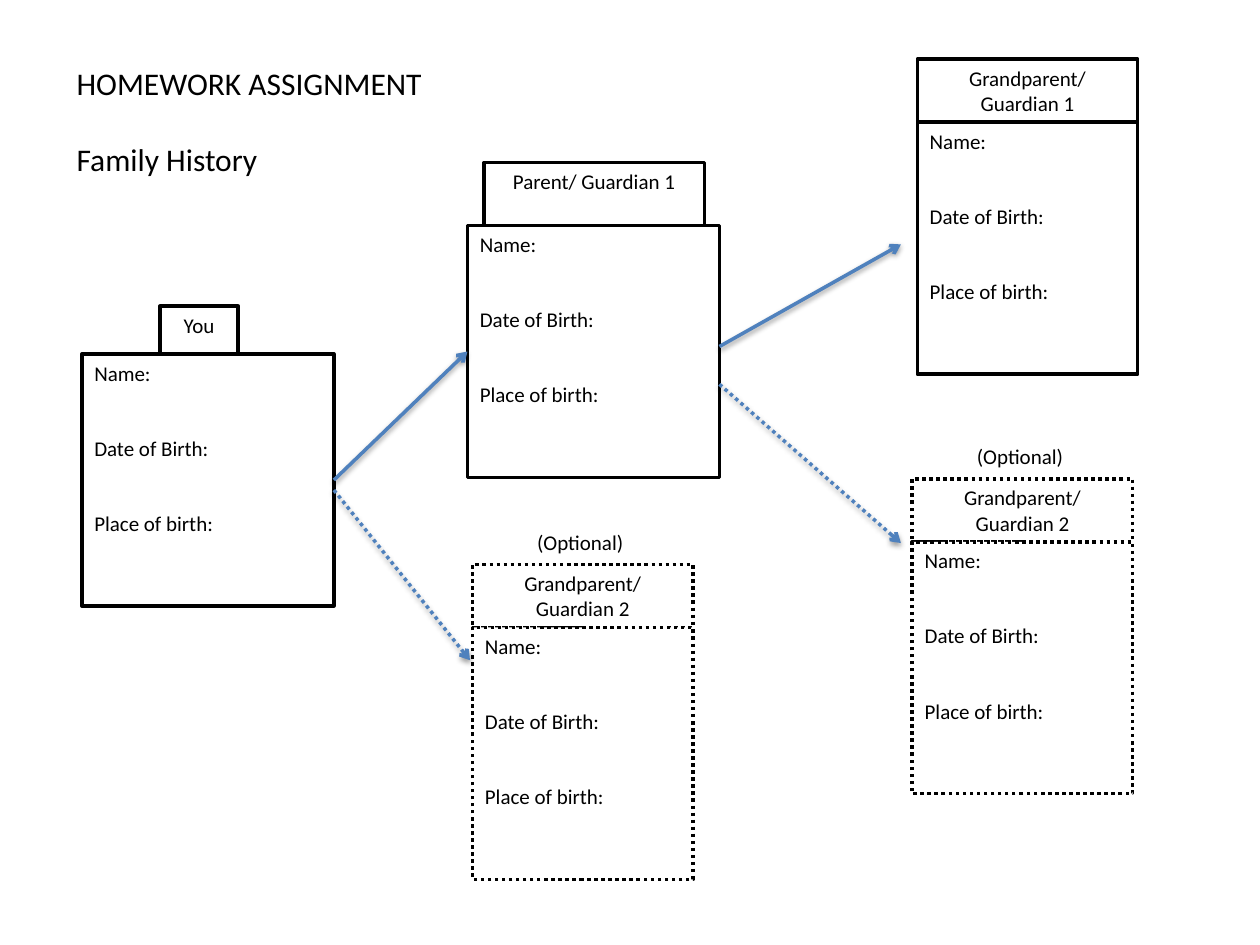
from lxml import etree
from pptx import Presentation
from pptx.dml.color import RGBColor
from pptx.enum.dml import MSO_LINE
from pptx.enum.shapes import MSO_CONNECTOR, MSO_SHAPE
from pptx.enum.text import MSO_ANCHOR, PP_ALIGN
from pptx.oxml.ns import qn
from pptx.util import Inches, Pt

BLACK = RGBColor(0, 0, 0)
WHITE = RGBColor(255, 255, 255)
BLUE = RGBColor(0x4F, 0x81, 0xBD)
DOTTED = MSO_LINE.ROUND_DOT
RECTANGLE = MSO_SHAPE.RECTANGLE
STRAIGHT = MSO_CONNECTOR.STRAIGHT
LEFT, CENTER, TOP = PP_ALIGN.LEFT, PP_ALIGN.CENTER, MSO_ANCHOR.TOP
FONT = "Calibri"
LEFT_SIDE, RIGHT_SIDE = 1, 3
FIELDS = ["Name:", "Date of Birth:", "Place of birth:"]
BODY_HEIGHT = 2

prs = Presentation()
prs.slide_width, prs.slide_height = Inches(10), Inches(7.5)
slide = prs.slides.add_slide(prs.slide_layouts[6])
shapes = slide.shapes


def write_lines(frame, lines, size, gap=0, align=LEFT):
    frame.word_wrap = True
    frame.vertical_anchor = TOP
    for index, line in enumerate(lines):
        paragraph = frame.paragraphs[0] if index == 0 else frame.add_paragraph()
        paragraph.text = line
        paragraph.alignment = align
        paragraph.font.name = FONT
        paragraph.font.size = Pt(size)
        paragraph.font.color.rgb = BLACK
        if index:
            paragraph.space_before = Pt(gap)


def add_box(left, top, width, height, lines, align=CENTER, outlined=True, dotted=False):
    box = shapes.add_shape(RECTANGLE, Inches(left), Inches(top), Inches(width), Inches(height))
    box.shadow.inherit = False
    box.fill.solid()
    box.fill.fore_color.rgb = WHITE
    if outlined:
        box.line.color.rgb = BLACK
        box.line.width = Pt(2)
        if dotted:
            box.line.dash_style = DOTTED
    else:
        box.line.fill.background()
    write_lines(box.text_frame, lines, 12, gap=28.5, align=align)
    return box


title = shapes.add_textbox(Inches(0.51), Inches(0.46), Inches(5.08), Inches(1.01))
write_lines(title.text_frame, ["HOMEWORK ASSIGNMENT", "Family History"], 18, gap=22)

# heading, body left, body top, body width, heading left, heading width, heading height, optional
people = [
    ("You", 0.65, 2.81, 2, 1.27, 0.62, 0.38, False),
    ("Parent/ Guardian 1", 3.71, 1.79, 2, 3.84, 1.75, 0.5, False),
    ("Grandparent/ Guardian 1", 7.28, 0.97, 1.75, 7.28, 1.75, 0.5, False),
    ("Grandparent/ Guardian 2", 7.24, 4.3, 1.75, 7.24, 1.75, 0.5, True),
    ("Grandparent/ Guardian 2", 3.75, 4.98, 1.75, 3.75, 1.75, 0.5, True),
]
bodies = []
for heading, left, top, width, heading_left, heading_width, heading_height, optional in people:
    heading_top = top - heading_height
    if optional:
        add_box(left - 0.02, heading_top - 0.33, width, 0.42, ["(Optional)"], outlined=False)
    add_box(heading_left, heading_top, heading_width, heading_height, [heading], dotted=optional)
    bodies.append(add_box(left, top, width, BODY_HEIGHT, FIELDS, align=LEFT, dotted=optional))

you, parent = bodies[:2]

# start x, start y, end x, end y, dotted
links = [
    (2.65, 3.81, 3.71, 2.79, False),
    (5.71, 2.75, 7.15, 1.94, False),
    (5.71, 3.05, 7.15, 4.31, True),
    (2.65, 3.89, 3.73, 5.24, True),
]
arrows = []
for x1, y1, x2, y2, dotted in links:
    arrow = shapes.add_connector(STRAIGHT, Inches(x1), Inches(y1), Inches(x2), Inches(y2))
    arrow.line.color.rgb = BLUE
    arrow.line.width = Pt(2)
    if dotted:
        arrow.line.dash_style = DOTTED
    etree.SubElement(arrow.line._get_or_add_ln(), qn("a:tailEnd"), type="arrow")
    arrows.append(arrow)

arrows[0].begin_connect(you, RIGHT_SIDE)
arrows[0].end_connect(parent, LEFT_SIDE)

prs.save("out.pptx")
